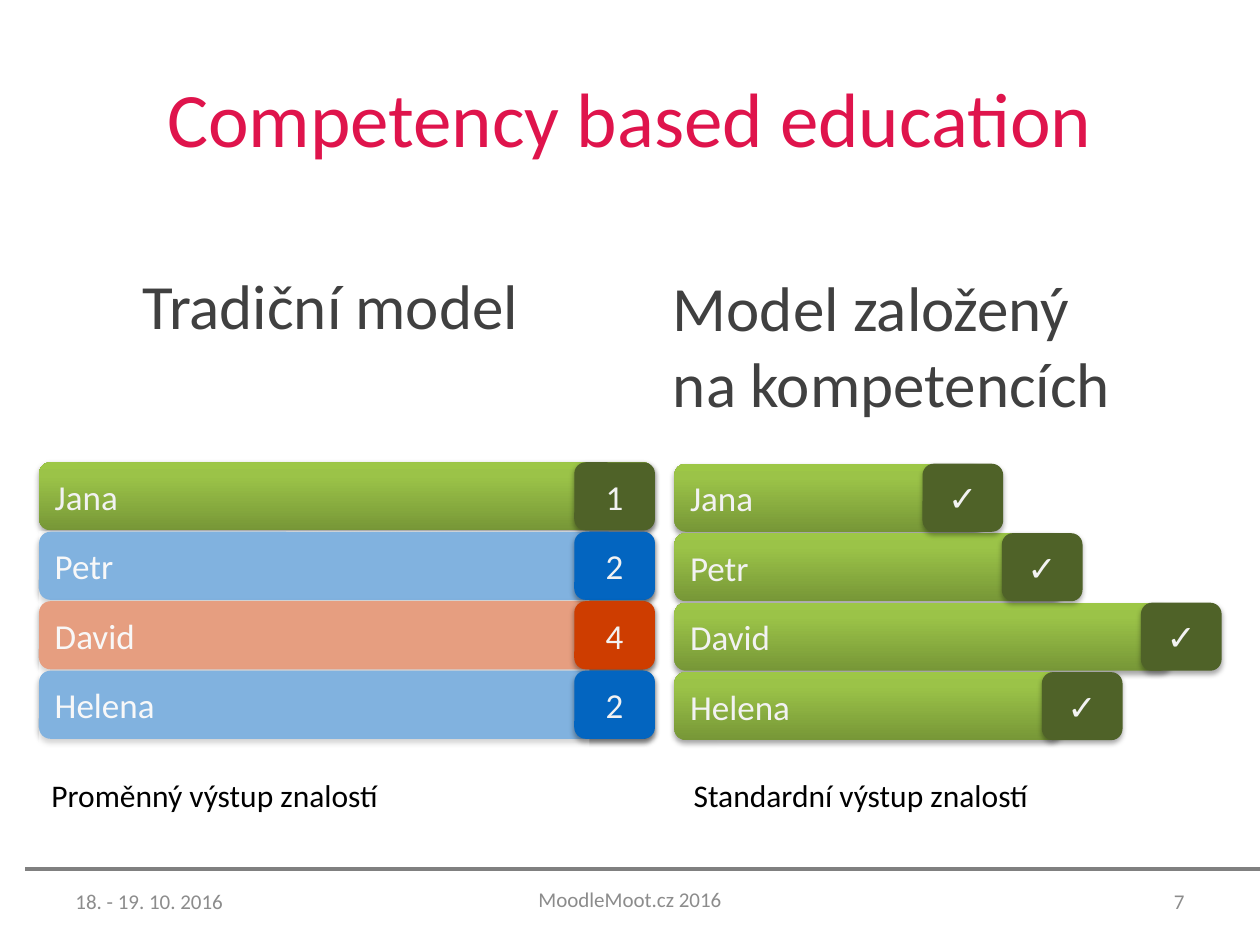
"""Build a slide comparing a traditional and a competency based model."""
from copy import deepcopy
from dataclasses import dataclass

from lxml import etree
from pptx import Presentation
from pptx.dml.color import RGBColor
from pptx.enum.shapes import MSO_CONNECTOR, MSO_SHAPE
from pptx.enum.text import MSO_ANCHOR, MSO_AUTO_SIZE, PP_ALIGN
from pptx.oxml import parse_xml
from pptx.oxml.ns import nsdecls, qn
from pptx.util import Pt

LEFT, CENTER, RIGHT = PP_ALIGN.LEFT, PP_ALIGN.CENTER, PP_ALIGN.RIGHT
TOP, MIDDLE = MSO_ANCHOR.TOP, MSO_ANCHOR.MIDDLE
FIT_TEXT = MSO_AUTO_SIZE.SHAPE_TO_FIT_TEXT
ROUNDED, RECTANGLE = MSO_SHAPE.ROUNDED_RECTANGLE, MSO_SHAPE.RECTANGLE
STRAIGHT = MSO_CONNECTOR.STRAIGHT

FONT = "Calibri"
COLORS = {
    "title": "DF144C",
    "heading": "404040",
    "caption": "000000",
    "footer": "8C8C8C",
    "rule": "808080",
    "label": "F2F2F2",
    "veil": "FFFFFF",
    "olive": "4F6228",
    "blue": "0365C0",
    "red": "CE3D00",
}
GREEN_STOPS = ((0, "779737"), (0.8, "9BC348"), (1, "9DC746"))
ROW_HEIGHT, ROW_PITCH, BADGE_WIDTH = 38.9, 39.7, 46.1


@dataclass(frozen=True)
class Label:
    text: str
    left: float
    top: float
    width: float
    height: float
    size: float
    color: str
    align: PP_ALIGN = LEFT
    anchor: MSO_ANCHOR = TOP
    fitted: bool = False


@dataclass(frozen=True)
class Student:
    name: str
    mark: str
    bar_width: float
    badge_left: float
    bar_color: str
    badge_color: str


LABELS = (
    Label("Competency based education", 36, 21.6, 648, 90, 44, "title", CENTER, MIDDLE),
    Label("18. - 19. 10. 2016", 36, 500.4, 168, 28.8, 12, "footer", LEFT, MIDDLE),
    Label("MoodleMoot.cz 2016", 276, 499.7, 168, 28.8, 12, "footer", CENTER, MIDDLE),
    Label("7", 516, 500.4, 168, 28.8, 12, "footer", RIGHT, MIDDLE),
    Label("Tradiční model", 74.2, 149, 236.9, 51.1, 36, "heading", fitted=True),
    Label("Model založený\nna kompetencích", 377.5, 150, 266.4, 94.3, 36, "heading", fitted=True),
    Label("Proměnný výstup znalostí", 22.3, 440, 203, 28.8, 18, "caption", fitted=True),
    Label("Standardní výstup znalostí", 389.3, 440, 208, 28.8, 18, "caption", fitted=True),
)
TRADITIONAL = (
    Student("Jana", "1", 351.4, 328.2, "green", "olive"),
    Student("Petr", "2", 351.4, 328.2, "blue", "blue"),
    Student("David", "4", 351.4, 328.2, "red", "red"),
    Student("Helena", "2", 351.4, 328.2, "blue", "blue"),
)
COMPETENCY = (
    Student("Jana", "✓", 175.7, 527.2, "green", "olive"),
    Student("Petr", "✓", 221, 572.5, "green", "olive"),
    Student("David", "✓", 283.7, 652, "green", "olive"),
    Student("Helena", "✓", 221, 595.4, "green", "olive"),
)


def rgb(name: str) -> RGBColor:
    """Look up a named colour."""
    return RGBColor.from_string(COLORS[name])


def write(frame, text: str, size: float, color: str, align: PP_ALIGN, anchor: MSO_ANCHOR) -> None:
    """Fill a text frame with evenly styled paragraphs."""
    frame.text = text
    frame.vertical_anchor = anchor
    for para in frame.paragraphs:
        para.alignment = align
        para.font.name = FONT
        para.font.size = Pt(size)
        para.font.color.rgb = rgb(color)


def add_label(page, label: Label) -> None:
    """Add a text box."""
    box = page.shapes.add_textbox(Pt(label.left), Pt(label.top), Pt(label.width), Pt(label.height))
    frame = box.text_frame
    write(frame, label.text, label.size, label.color, label.align, label.anchor)
    frame.word_wrap = not label.fitted
    if label.fitted:
        frame.auto_size = FIT_TEXT


def fill_green(fill) -> None:
    """Apply the three-stop green gradient, dark at the bottom."""
    fill.gradient()
    fill.gradient_angle = 90
    stop_list = fill._xPr.find(qn("a:gradFill")).find(qn("a:gsLst"))
    stop_list.append(deepcopy(stop_list[-1]))
    for stop, (position, color) in zip(fill.gradient_stops, GREEN_STOPS):
        stop.position = position
        stop.color.rgb = RGBColor.from_string(color)


def add_shadow(shape) -> None:
    """Give a shape a soft shadow below it."""
    effects = shape._element.spPr.find(qn("a:effectLst"))
    effects.append(parse_xml(
        f'<a:outerShdw {nsdecls("a")} blurRad="{Pt(3.1)}" dist="{Pt(1.8)}" dir="5400000" '
        'rotWithShape="0"><a:srgbClr val="000000"><a:alpha val="35000"/></a:srgbClr></a:outerShdw>'
    ))


def add_tile(page, text: str, left: float, top: float, width: float, color: str, align: PP_ALIGN) -> None:
    """Add a rounded tile with a shadow and a text."""
    tile = page.shapes.add_shape(ROUNDED, Pt(left), Pt(top), Pt(width), Pt(ROW_HEIGHT))
    tile.shadow.inherit = False
    tile.line.fill.background()
    if color == "green":
        fill_green(tile.fill)
    else:
        tile.fill.solid()
        tile.fill.fore_color.rgb = rgb(color)
    add_shadow(tile)
    write(tile.text_frame, text, 20, "label", align, MIDDLE)


def add_bars(page, students: tuple[Student, ...], left: float, top: float) -> None:
    """Add one name bar for each student."""
    for row, student in enumerate(students):
        add_tile(page, student.name, left, top + row * ROW_PITCH, student.bar_width, student.bar_color, LEFT)


def add_badges(page, students: tuple[Student, ...], top: float) -> None:
    """Add one result badge for each student."""
    for row, student in enumerate(students):
        add_tile(page, student.mark, student.badge_left, top + row * ROW_PITCH, BADGE_WIDTH,
                 student.badge_color, CENTER)


def add_veil(page) -> None:
    """Add the half-transparent sheet that fades the lower bars."""
    veil = page.shapes.add_shape(RECTANGLE, Pt(22.3), Pt(303.3), Pt(314.6), Pt(126))
    veil.shadow.inherit = False
    veil.line.fill.background()
    veil.fill.solid()
    veil.fill.fore_color.rgb = rgb("veil")
    color = next(veil._element.spPr.iter(qn("a:srgbClr")))
    etree.SubElement(color, qn("a:alpha"), val="50000")


def add_rule(page) -> None:
    """Add the line above the footer."""
    rule = page.shapes.add_connector(STRAIGHT, Pt(14.4), Pt(496.8), Pt(734.4), Pt(496.8))
    rule.line.color.rgb = rgb("rule")
    rule.line.width = Pt(2.25)
    etree.SubElement(rule._element.spPr, qn("a:effectLst"))


def main() -> None:
    """Build and save the deck."""
    deck = Presentation()
    deck.slide_width, deck.slide_height = Pt(720), Pt(540)
    page = deck.slides.add_slide(deck.slide_layouts[6])
    add_rule(page)
    add_bars(page, TRADITIONAL, 22.3, 264.2)
    add_veil(page)
    add_badges(page, TRADITIONAL, 264.2)
    add_bars(page, COMPETENCY, 385.4, 265)
    add_badges(page, COMPETENCY, 265)
    for label in LABELS:
        add_label(page, label)
    deck.save("out.pptx")


if __name__ == "__main__":
    main()
